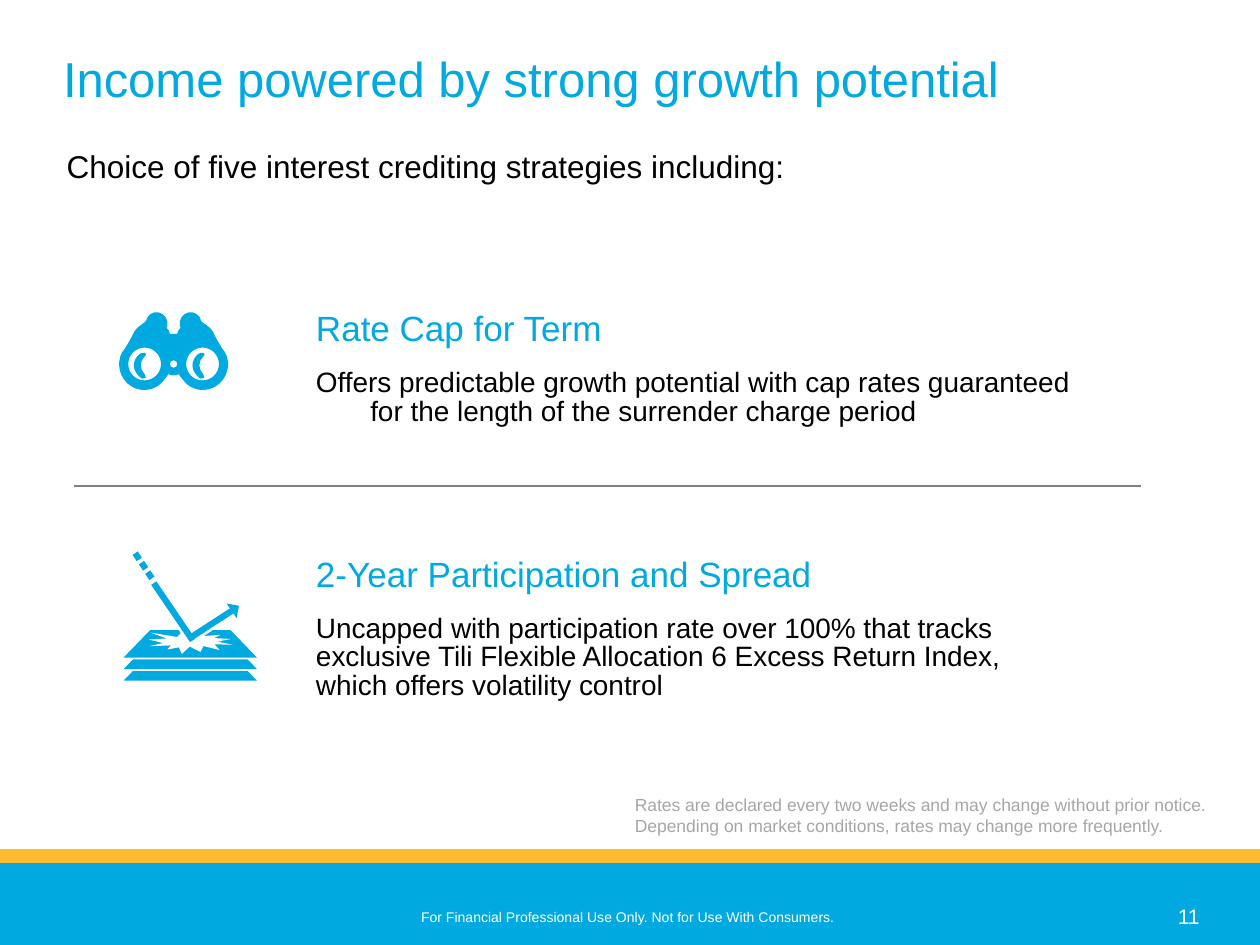
from lxml import etree
from pptx import Presentation
from pptx.dml.color import RGBColor
from pptx.enum import shapes as kinds, text as enums
from pptx.oxml.ns import qn
from pptx.util import Pt

BLUE = RGBColor(0x00, 0xA9, 0xE0)
GOLD = RGBColor(0xFD, 0xBB, 0x30)
WHITE = RGBColor(0xFF, 0xFF, 0xFF)
BLACK = RGBColor(0, 0, 0)
GRAY = RGBColor(0x80, 0x80, 0x80)
PALE = RGBColor(0xA6, 0xA6, 0xA6)
FORM = kinds.MSO_SHAPE
LEFT, CENTER = enums.PP_ALIGN.LEFT, enums.PP_ALIGN.CENTER

TITLE = "Income powered by strong growth potential"
LEAD = "Choice of five interest crediting strategies including:"
# box, heading, body, hanging indent of the body
PLANS = [
    ((173.5, 175.4, 488, 72.7), "Rate Cap for Term",
     "Offers predictable growth potential with cap rates guaranteed\v"
     "for the length of the surrender charge period", 31),
    ((173.5, 315.7, 479, 89.3), "2-Year Participation and Spread",
     "Uncapped with participation rate over 100% that tracks\v"
     "exclusive Tili Flexible Allocation 6 Excess Return Index,\v"
     "which offers volatility control", 0),
]
NOTE = ("Rates are declared every two weeks and may change without prior notice. "
        "Depending on market conditions, rates may change more frequently.")
FOOT = "For Financial Professional Use Only. Not for Use With Consumers."
PAGE = "11"

# Binoculars on a grid of 0.72 points, measured from the top of the hinge.
# A start point, then two control points and an end point for each curve.
UNIT, HUB = 0.72, (99.2, 177.8)
BODY = [
    (3, 18),
    (3, 16), (4, 15), (5, 14), (6, 13), (6, 13), (5, 12),
    (4, 7), (7, 2), (12, 1), (16, 0), (21, 3), (22, 8),
    (22, 9), (23, 9), (23, 9), (26, 11), (29, 13), (31, 16),
    (33, 20), (35, 24), (37, 27), (38, 28), (38, 28), (38, 29),
    (42, 33), (44, 39), (43, 45), (42, 53), (36, 60), (28, 62),
    (20, 64), (12, 61), (7, 54), (6, 53), (5, 51), (4, 50),
    (3, 51), (1, 51), (0, 51)]
HOLES = [(-23, 42, 13), (0, 42, 3), (23, 42, 13)]
GLINT = [
    (-23, 50),
    (-27, 46), (-27, 40), (-23, 36), (-22, 36), (-22, 35), (-22, 34),
    (-23, 34), (-23, 33), (-23, 33), (-24, 33), (-26, 33), (-27, 34),
    (-33, 39), (-33, 47), (-27, 52), (-26, 54), (-24, 54), (-23, 53),
    (-22, 53), (-22, 53), (-22, 53), (-22, 52), (-22, 51), (-23, 50)]

# Bouncing beam: form, box, turn
BEAM = [
    (FORM.RECTANGLE, (79.2, 347.8, 39.6, 3.6), 55.8),
    (FORM.RECTANGLE, (105.8, 355, 29.5, 3.6), 327),
    (FORM.RIGHT_ARROW, (126.7, 344.2, 10.8, 10.1), 325.7),
]


def place(box):
    return [Pt(v) for v in box]


def paint(shape, fill, edge=0):
    shape.shadow.inherit = False
    shape.fill.solid()
    shape.fill.fore_color.rgb = fill
    if edge:
        shape.line.color.rgb = WHITE
        shape.line.width = Pt(edge)
    else:
        shape.line.fill.background()


def draw(home, form, box, fill=BLUE, turn=0, edge=0):
    shape = home.add_shape(form, *place(box))
    shape.rotation = turn
    if form == FORM.RIGHT_ARROW:
        shape.adjustments[0] = 0.105
    paint(shape, fill, edge)


def style(par, size, color, align=LEFT):
    par.alignment = align
    par.font.name, par.font.size = "Arial", Pt(size)
    par.font.color.rgb = color
    for run in par.runs:
        run.font.name, run.font.size = "Arial", Pt(size)
        run.font.color.rgb = color


def write(home, box, words, size, color, align=LEFT, wrap=True):
    frame = home.add_textbox(*place(box)).text_frame
    frame.word_wrap = wrap
    frame.text = words
    style(frame.paragraphs[0], size, color, align)
    return frame


def ring(x, y, r):
    """Circle of four curves."""
    k = 0.55 * r
    pts = [(r, 0)]
    for c, s in ((1, 0), (0, 1), (-1, 0), (0, -1)):
        for u, v in ((r, k), (k, r), (0, r)):
            pts.append((c * u - s * v, s * u + c * v))
    return [(x + u, y + v) for u, v in pts]


def outline(home, loops):
    """Fill closed loops of curves as one shape; inner loops are holes."""
    build = None
    for loop in loops:
        pts = [(Pt(HUB[0] + x * UNIT), Pt(HUB[1] + y * UNIT)) for x, y in loop]
        if build is None:
            build = home.build_freeform(*pts[0], scale=1.0)
        else:
            build.move_to(*pts[0])
        build.add_line_segments(pts[1:], close=True)
    shape = build.convert_to_shape()
    lines = list(shape._element.iter(qn("a:lnTo")))
    for i in range(0, len(lines), 3):
        curve = etree.Element(qn("a:cubicBezTo"))
        lines[i].addprevious(curve)
        for line in lines[i:i + 3]:
            curve.append(line[0])
            line.getparent().remove(line)
    paint(shape, BLUE)


def scope(home):
    full = BODY + [(-x, y) for x, y in BODY[-2::-1]]
    outline(home, [full] + [ring(*hole) for hole in HOLES])
    for shift in (0, 46.5):
        outline(home, [[(x + shift, y) for x, y in GLINT]])


def bounce(home):
    for i in range(3):
        box = 70.6, 373.2 - 6.6 * i, 76.3, 15.8
        for edge in (2, 0):
            draw(home, FORM.FLOWCHART_MANUAL_OPERATION, box, turn=180, edge=edge)
    draw(home, FORM.EXPLOSION1, (85, 360, 48.2, 13.7), WHITE)
    for edge in (3, 0):
        for form, box, turn in BEAM:
            draw(home, form, box, turn=turn, edge=edge)
    for i in range(3):
        draw(home, FORM.RECTANGLE, (76.3 + 3.6 * i, 316.1 + 5.4 * i, 4.3, 3.6),
             turn=55.8)


def main():
    deck = Presentation()
    deck.slide_width, deck.slide_height = Pt(720), Pt(540)
    slide = deck.slides.add_slide(deck.slide_layouts[5])
    home = slide.shapes

    draw(home, FORM.RECTANGLE, (0, 485.2, 720, 8.6), GOLD)
    draw(home, FORM.RECTANGLE, (0, 493.2, 720, 46.8))
    foot = write(home, (174.6, 515, 368.6, 13.7), FOOT, 8, WHITE, CENTER)
    foot.vertical_anchor = enums.MSO_ANCHOR.BOTTOM
    foot.margin_bottom = 0
    write(home, (666, 512.6, 27.4, 21.6), PAGE, 12, WHITE, wrap=False)

    title = home.title
    title.left, title.top, title.width, title.height = place((36, 18, 647.3, 53.3))
    frame = title.text_frame
    frame.text = TITLE
    frame.vertical_anchor = enums.MSO_ANCHOR.MIDDLE
    frame.margin_left = frame.margin_right = 0
    frame.margin_top = frame.margin_bottom = 0
    style(frame.paragraphs[0], 28, BLUE)

    rule = home.add_connector(kinds.MSO_CONNECTOR.STRAIGHT,
                              *place((42.5, 277.9, 652.3, 277.9)))
    rule.line.color.rgb, rule.line.width = GRAY, Pt(1)
    etree.SubElement(rule._element.spPr, qn("a:effectLst"))

    for box, head, body, hang in PLANS:
        frame = write(home, box, head, 20, BLUE)
        par = frame.add_paragraph()
        par.text = body
        par.space_before = Pt(12)
        style(par, 16, BLACK)
        props = par._p.get_or_add_pPr()
        props.set("marL", str(Pt(hang)))
        props.set("indent", str(-Pt(hang)))
        for par in frame.paragraphs:
            par.line_spacing = 0.85

    lead = write(home, (31, 83.8, 517.7, 25.9), LEAD, 18, BLACK)
    lead.paragraphs[0].line_spacing = 0.85
    scope(home.add_group_shape().shapes)
    bounce(home.add_group_shape().shapes)
    write(home, (355.7, 450, 350.6, 43.9), NOTE, 10, PALE)
    deck.save("out.pptx")


if __name__ == "__main__":
    main()
